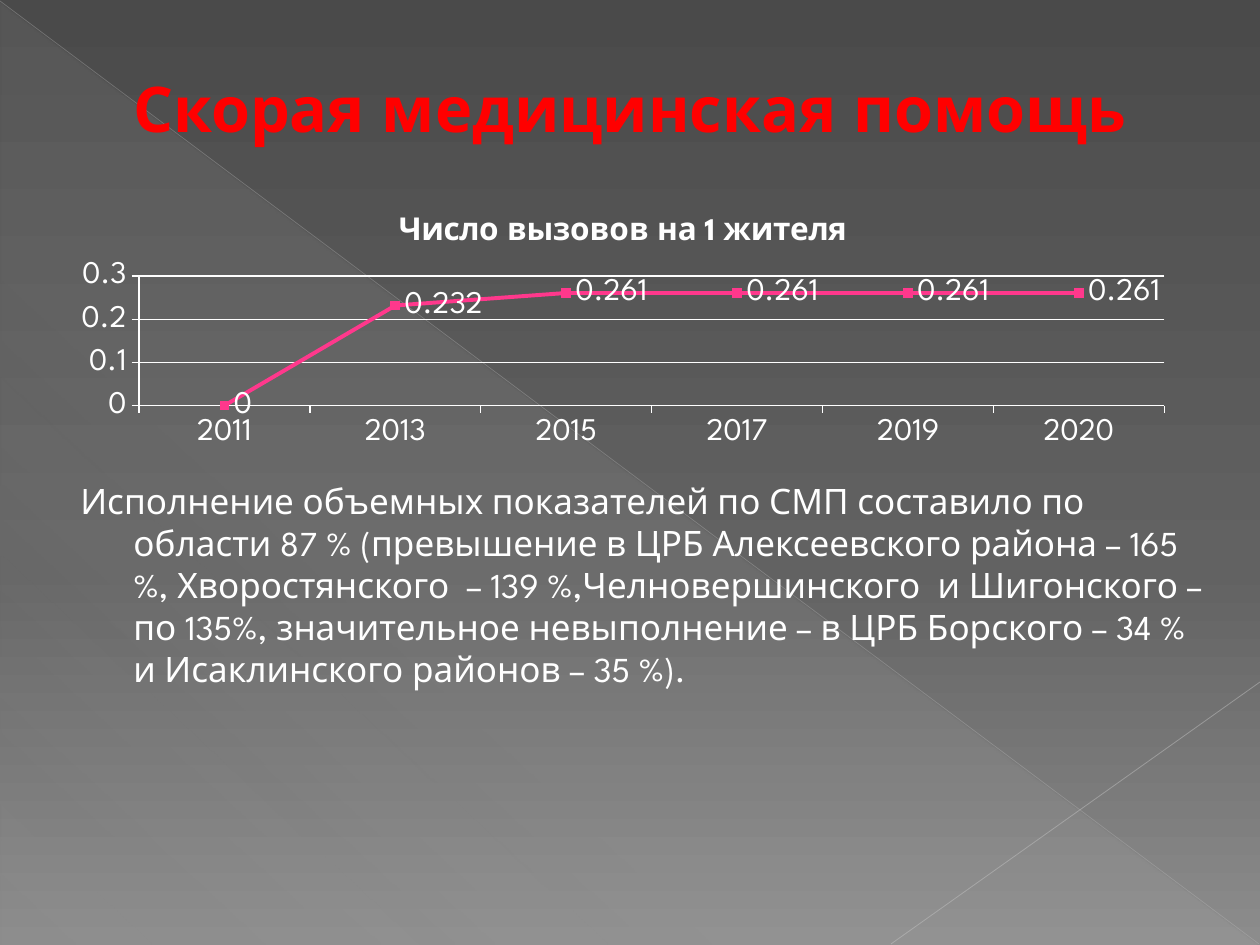
from dataclasses import dataclass

from lxml import etree
from pptx import Presentation
from pptx.chart.data import CategoryChartData
from pptx.dml.color import RGBColor
from pptx.enum.chart import XL_CHART_TYPE, XL_LABEL_POSITION, XL_MARKER_STYLE, XL_TICK_MARK
from pptx.enum.shapes import MSO_CONNECTOR, MSO_SHAPE
from pptx.enum.text import MSO_ANCHOR, PP_ALIGN
from pptx.oxml.ns import qn
from pptx.util import Pt

LINE_MARKERS = XL_CHART_TYPE.LINE_MARKERS
LABEL_RIGHT = XL_LABEL_POSITION.RIGHT
SQUARE = XL_MARKER_STYLE.SQUARE
CROSS = XL_TICK_MARK.CROSS
OUTSIDE = XL_TICK_MARK.OUTSIDE
NO_TICK = XL_TICK_MARK.NONE
STRAIGHT = MSO_CONNECTOR.STRAIGHT
RIGHT_TRIANGLE = MSO_SHAPE.RIGHT_TRIANGLE
TOP, MIDDLE = MSO_ANCHOR.TOP, MSO_ANCHOR.MIDDLE
LEFT, CENTER = PP_ALIGN.LEFT, PP_ALIGN.CENTER

EMU_PER_PX = 914400 / 126
BLANK_LAYOUT = 6


@dataclass(frozen=True)
class Theme:
    font: str = "League Spartan"
    title_size: int = 36
    body_size: int = 20
    chart_size: int = 18
    title: str = "FF0000"
    text: str = "FFFFFF"
    series: str = "FF388C"
    diagonal: str = "BFBFBF"
    corner: str = "C6C6C6"
    # Gradient stops: position %, colour, opacity %
    background: tuple = ((0, "4A4A4A", 100), (60, "626262", 100), (100, "8C8C8C", 100))
    triangle: tuple = ((0, "D2D2D2", 10), (70, "D2D2D2", 8), (100, "D2D2D2", 1))


def px(length):
    return round(length * EMU_PER_PX)


def color(value):
    return RGBColor.from_string(value)


def add_alpha(color_element, percent):
    etree.SubElement(color_element, qn("a:alpha")).set("val", str(percent * 1000))


def set_gradient(fill, parent, stops, angle):
    """Replace the fill inside parent by a linear gradient."""
    fill.solid()
    solid = parent.find(qn("a:solidFill"))
    gradient = etree.Element(qn("a:gradFill"), rotWithShape="1")
    stop_list = etree.SubElement(gradient, qn("a:gsLst"))
    for position, value, opacity in stops:
        stop = etree.SubElement(stop_list, qn("a:gs"), pos=str(position * 1000))
        add_alpha(etree.SubElement(stop, qn("a:srgbClr"), val=value), opacity)
    etree.SubElement(gradient, qn("a:lin"), ang=str(angle * 60000), scaled="0")
    parent.replace(solid, gradient)


def format_font(font, theme, size, value, bold=False):
    font.name, font.size, font.bold = theme.font, Pt(size), bold
    font.color.rgb = color(value)


def write_text(frame, text, *, theme, size, value, bold=False, align=LEFT,
               anchor=TOP, margin=0, indent=0):
    frame.word_wrap = True
    frame.vertical_anchor = anchor
    paragraph = frame.paragraphs[0]
    paragraph.alignment = align
    properties = paragraph._p.get_or_add_pPr()
    properties.set("marL", str(px(margin)))
    properties.set("indent", str(px(indent)))
    run = paragraph.add_run()
    run.text = text
    format_font(run.font, theme, size, value, bold)


class SlideBuilder:
    def __init__(self, slide, theme):
        self.slide, self.theme = slide, theme

    def background(self):
        fill = self.slide.background.fill
        fill.solid()
        parent = self.slide.element.find(".//" + qn("p:bgPr"))
        set_gradient(fill, parent, self.theme.background, 90)

    def triangle(self, left, top, width, height):
        shape = self.slide.shapes.add_shape(
            RIGHT_TRIANGLE, px(left), px(top), px(width), px(height))
        shape.shadow.inherit = False
        shape.line.fill.background()
        set_gradient(shape.fill, shape._element.spPr, self.theme.triangle, 133)

    def line(self, start, end, value, width, opacity):
        connector = self.slide.shapes.add_connector(
            STRAIGHT, *map(px, start), *map(px, end))
        connector.line.width = Pt(width)
        connector.line.color.rgb = color(value)
        properties = connector._element.spPr
        add_alpha(properties.find(".//" + qn("a:srgbClr")), opacity)
        etree.SubElement(properties, qn("a:effectLst"))

    def text(self, left, top, width, height, text, **text_format):
        box = self.slide.shapes.add_textbox(px(left), px(top), px(width), px(height))
        write_text(box.text_frame, text, theme=self.theme, **text_format)

    def line_chart(self, left, top, width, height, title, categories, values):
        theme = self.theme
        data = CategoryChartData()
        data.categories = categories
        data.add_series(title, values)
        chart = self.slide.shapes.add_chart(
            LINE_MARKERS, px(left), px(top), px(width), px(height), data).chart
        format_font(chart.font, theme, theme.chart_size, theme.text)
        chart.has_legend = False
        chart.has_title = True
        write_text(chart.chart_title.text_frame, title, theme=theme, bold=True,
                   size=theme.chart_size, value=theme.text, align=CENTER)
        chart.chart_title.include_in_layout = False

        # Axes and grid
        value_axis = chart.value_axis
        value_axis.minimum_scale, value_axis.maximum_scale = 0, 0.3
        value_axis.major_unit = 0.1
        value_axis.has_major_gridlines = True
        for axis in (chart.category_axis, value_axis):
            axis.major_tick_mark, axis.minor_tick_mark = OUTSIDE, NO_TICK
        for line in (chart.category_axis.format.line, value_axis.format.line,
                     value_axis.major_gridlines.format.line):
            line.color.rgb = color(theme.text)
            line.width = Pt(0.75)

        # Series with value labels
        plot = chart.plots[0]
        plot.vary_by_categories = False
        series = plot.series[0]
        series.smooth = False
        series.format.line.color.rgb = color(theme.series)
        series.format.line.width = Pt(2.25)
        series.marker.style, series.marker.size = SQUARE, 5
        series.marker.format.fill.solid()
        series.marker.format.fill.fore_color.rgb = color(theme.series)
        series.marker.format.line.color.rgb = color(theme.series)
        labels = series.data_labels
        labels.show_value, labels.position = True, LABEL_RIGHT
        format_font(labels.font, theme, theme.chart_size, theme.text)


def main():
    theme = Theme()
    presentation = Presentation()
    presentation.slide_width, presentation.slide_height = px(1260), px(945)
    slide = presentation.slides.add_slide(presentation.slide_layouts[BLANK_LAYOUT])
    builder = SlideBuilder(slide, theme)

    # Backdrop
    builder.background()
    builder.triangle(1, 3, 1257, 942)
    builder.line((0, 1), (1259, 944), theme.diagonal, 0.39, 35)
    builder.line((1260, 682), (891, 944), theme.corner, 0.47, 45)

    # Title
    builder.text(63, 37, 1134, 140, "Скорая медицинская помощь", bold=True,
                 size=theme.title_size, value=theme.title, align=CENTER, anchor=MIDDLE)

    # Calls per resident
    builder.line_chart(59, 197, 1128, 255, "Число вызовов на 1 жителя",
                       ("2011", "2013", "2015", "2017", "2019", "2020"),
                       (0, 0.232, 0.261, 0.261, 0.261, 0.261))

    # Commentary
    builder.text(
        59, 473, 1162, 472,
        "Исполнение объемных показателей по СМП составило по области 87 % "
        "(превышение в ЦРБ Алексеевского района – 165 %, Хворостянского  – 139 %,"
        "Челновершинского  и Шигонского – по 135%, значительное невыполнение – "
        "в ЦРБ Борского – 34 % и Исаклинского районов – 35 %).",
        size=theme.body_size, value=theme.text, margin=62, indent=-53)

    presentation.save("out.pptx")


if __name__ == "__main__":
    main()
